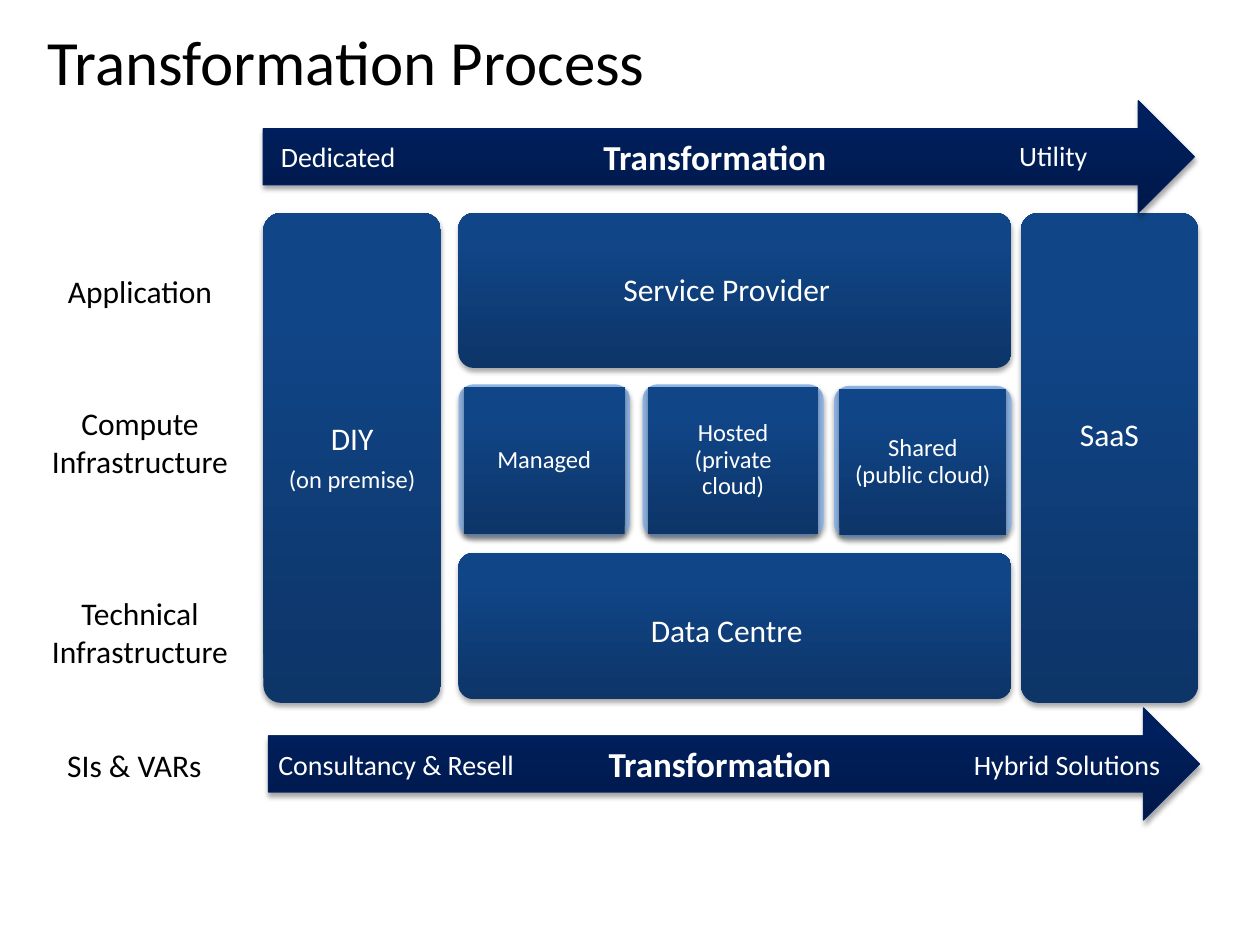
from dataclasses import dataclass

from lxml.etree import SubElement
from pptx import Presentation
from pptx.dml.color import RGBColor
from pptx.enum.shapes import MSO_SHAPE as Shape
from pptx.enum.text import MSO_ANCHOR as Anchor, MSO_AUTO_SIZE as AutoSize, PP_ALIGN as Align
from pptx.oxml.ns import qn
from pptx.util import Pt


@dataclass(frozen=True)
class Theme:
    font: str = "Calibri"
    ink: str = "000000"
    paper: str = "FFFFFF"
    edge: str = "8EB4E3"
    arrow_line: str = "001F5E"
    panel_fill: tuple = ((0, "0D3568"), (80, "104587"), (100, "0E458A"))
    arrow_fill: tuple = ((0, "001848"), (80, "001F5D"), (100, "001F5D"))
    title: int = 36
    banner: int = 20
    label: int = 18
    caption: int = 16
    detail: int = 14


class SlideBuilder:
    """Draws styled elements on the current slide, with lengths in points."""

    def __init__(self, slide, theme):
        self.slide = slide
        self.theme = theme

    def add_lines(self, frame, lines, color, align=Align.CENTER, bold=None, packed=False):
        for index, (words, size) in enumerate(lines):
            paragraph = frame.paragraphs[0] if index == 0 else frame.add_paragraph()
            paragraph.alignment = align
            if packed:
                paragraph.line_spacing = 0.9
                paragraph.space_after = Pt(6)
            run = paragraph.add_run()
            run.text = words
            run.font.name = self.theme.font
            run.font.size = Pt(size)
            run.font.bold = bold
            run.font.color.rgb = RGBColor.from_string(color)

    def block(self, kind, box, fill, line=None):
        shape = self.slide.shapes.add_shape(kind, *map(Pt, box))
        if isinstance(fill, str):
            shape.fill.solid()
            shape.fill.fore_color.rgb = RGBColor.from_string(fill)
        else:
            shape.fill.gradient()
            shape.fill.gradient_angle = 90
            stops = shape._element.spPr.find(qn("a:gradFill")).find(qn("a:gsLst"))
            stops.clear()
            for percent, color in fill:
                stop = SubElement(stops, qn("a:gs"), pos=str(percent * 1000))
                SubElement(stop, qn("a:srgbClr"), val=color)
        if line:
            shape.line.color.rgb = RGBColor.from_string(line)
            shape.line.width = Pt(0.75)
        else:
            shape.line.fill.background()
        if kind == Shape.ROUNDED_RECTANGLE:
            shape.adjustments[0] = 0.1
        self.shade(shape)
        return shape

    def shade(self, shape):
        shape.shadow.inherit = False
        effects = shape._element.spPr.find(qn("a:effectLst"))
        shadow = SubElement(effects, qn("a:outerShdw"), blurRad=str(int(Pt(3.1))),
                            dist=str(int(Pt(1.8))), dir="5400000", rotWithShape="0")
        tint = SubElement(shadow, qn("a:srgbClr"), val=self.theme.ink)
        SubElement(tint, qn("a:alpha"), val="35000")

    def pack(self, frame, lines):
        frame.word_wrap = True
        frame.vertical_anchor = Anchor.MIDDLE
        frame.margin_left = frame.margin_right = Pt(8.6)
        frame.margin_top = frame.margin_bottom = Pt(8.6)
        self.add_lines(frame, lines, self.theme.paper, packed=True)

    def title(self, box, words):
        title = self.slide.shapes.title
        title.left, title.top, title.width, title.height = map(Pt, box)
        frame = title.text_frame
        frame.auto_size = AutoSize.NONE
        frame.vertical_anchor = Anchor.TOP
        self.add_lines(frame, [(words, self.theme.title)], self.theme.ink, Align.LEFT)

    def row_label(self, box, words):
        frame = self.slide.shapes.add_textbox(*map(Pt, box)).text_frame
        frame.word_wrap = True
        frame.auto_size = AutoSize.SHAPE_TO_FIT_TEXT
        frame.vertical_anchor = Anchor.MIDDLE
        self.add_lines(frame, [(words, self.theme.label)], self.theme.ink)

    def panel(self, box, text_box, lines):
        self.block(Shape.ROUNDED_RECTANGLE, box, self.theme.panel_fill)
        self.pack(self.slide.shapes.add_textbox(*map(Pt, text_box)).text_frame, lines)

    def tile(self, left, top, width, height, words):
        self.block(Shape.ROUNDED_RECTANGLE, (left, top, width, height), self.theme.edge)
        face = self.block(Shape.RECTANGLE, (left + 3, top + 1.8, width - 6, height - 3.6),
                          self.theme.panel_fill)
        self.pack(face.text_frame, [(words, self.theme.detail)])

    def arrow(self, left, top, words, captions):
        arrow = self.block(Shape.RIGHT_ARROW, (left, top, 532, 64),
                           self.theme.arrow_fill, self.theme.arrow_line)
        arrow.text_frame.vertical_anchor = Anchor.MIDDLE
        self.add_lines(arrow.text_frame, [(words, self.theme.banner)],
                       self.theme.paper, bold=True)
        for caption, *box in captions:
            frame = self.slide.shapes.add_textbox(*map(Pt, box), Pt(26.6)).text_frame
            frame.word_wrap = False
            frame.auto_size = AutoSize.SHAPE_TO_FIT_TEXT
            self.add_lines(frame, [(caption, self.theme.caption)], self.theme.paper, Align.LEFT)


def main():
    theme = Theme()
    deck = Presentation()
    deck.slide_width, deck.slide_height = Pt(720), Pt(540)
    builder = SlideBuilder(deck.slides.add_slide(deck.slide_layouts[5]), theme)

    builder.title((20, 9.4, 680, 85), "Transformation Process")
    for words, left, top, width, height in (
        ("Application", 20, 152, 120, 29),
        ("Compute Infrastructure", 20, 227, 120, 51),
        ("Technical Infrastructure", 20, 335.5, 120, 51),
        ("SIs & VARs", 3, 422.6, 147.6, 29),
    ):
        builder.row_label((left, top, width, height), words)

    middle, panel_top = 262, 121.7
    for words, top, height, text_top, text_height in (
        ("Service Provider", panel_top, 88.6, 123.8, 85),
        ("Data Centre", 316, 83.5, 321, 80.6),
    ):
        builder.panel((middle, top, 316, height), (middle, text_top, 306.7, text_height),
                      [(words, theme.label)])
    for words, left, top, width in (
        ("Managed", middle, 219.6, 98),
        ("Hosted (private cloud)", 367.2, 219.6, 103.5),
        ("Shared (public cloud)", 476.6, 220.5, 101.5),
    ):
        builder.tile(left, top, width, 87.1, words)
    for left, text_height, lines in (
        (583.2, 243, [("SaaS", theme.label)]),
        (150.5, 269.3, [("DIY", theme.label), ("(on premise)", theme.detail)]),
    ):
        builder.panel((left, panel_top, 101.5, 280),
                      (left + 3, panel_top + 5.8, 95.5, text_height), lines)

    builder.arrow(150.5, 57.6, "Transformation",
                  (("Dedicated", 153.4, 76.3, 80.6), ("Utility", 575.3, 75.6, 54)))
    builder.arrow(153.4, 404.6, "Transformation",
                  (("Consultancy & Resell", 152, 423.4, 150.5),
                   ("Hybrid Solutions", 549.4, 423.4, 122.4)))
    deck.save("out.pptx")


if __name__ == "__main__":
    main()
